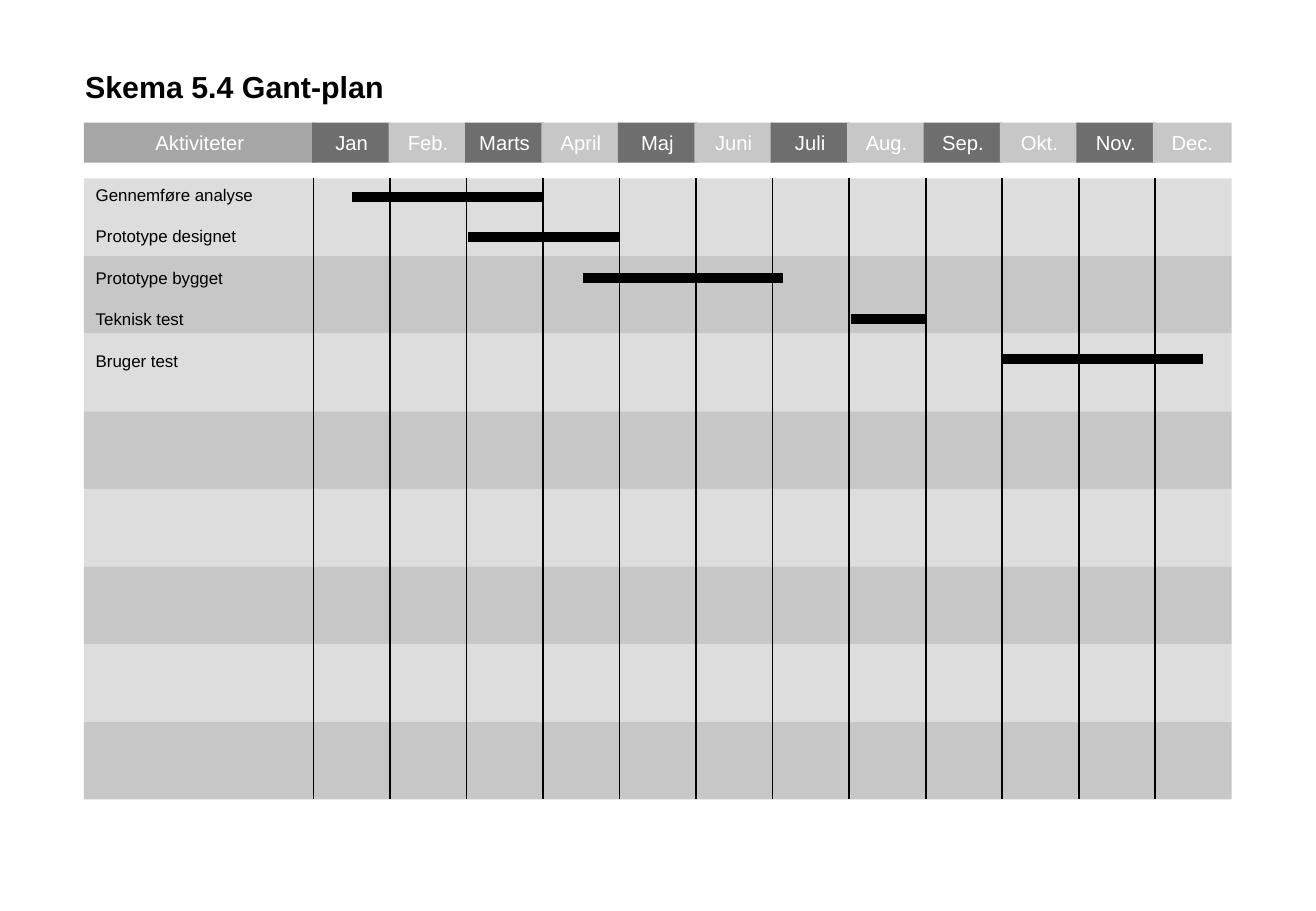
from pptx import Presentation
from pptx.dml.color import RGBColor
from pptx.enum.shapes import MSO_CONNECTOR as CONNECTOR, MSO_SHAPE as SHAPE
from pptx.enum.text import MSO_ANCHOR as ANCHOR, MSO_AUTO_SIZE as AUTO_SIZE, PP_ALIGN as ALIGN
from pptx.oxml.ns import qn
from pptx.util import Pt
from lxml.etree import SubElement

BLACK = RGBColor(0x00, 0x00, 0x00)
WHITE = RGBColor(0xFF, 0xFF, 0xFF)
DARK = RGBColor(0x6E, 0x6E, 0x6E)
MEDIUM = RGBColor(0xA6, 0xA6, 0xA6)
SILVER = RGBColor(0xC7, 0xC7, 0xC7)
PALE = RGBColor(0xDD, 0xDD, 0xDD)

MONTHS = ["Jan", "Feb.", "Marts", "April", "Maj", "Juni",
          "Juli", "Aug.", "Sep.", "Okt.", "Nov.", "Dec."]
ACTIVITIES = [
    ("Gennemføre analyse", 0.51, 2.99),
    ("Prototype designet", 2.02, 4),
    ("Prototype bygget", 3.52, 6.13),
    ("Teknisk test", 7.03, 8),
    ("Bruger test", 9, 11.63),
]

LEFT, WIDTH = 49.7, 680.4
HEADER_TOP, HEADER_HEIGHT = 72.7, 23.8
HEADER_LEFT, HEADER_STEP = 185, 45.3
PLAN_TOP, BAND_HEIGHT, BANDS = 105.8, 46, 8
PLAN_BOTTOM = PLAN_TOP + BANDS * BAND_HEIGHT
GRID_LEFT, MONTH_WIDTH = 185.8, 45.36
BAR_TOP, BAR_STEP = 116.6, 24.1


class GanttSlide:
    font = "Arial"

    def __init__(self, deck):
        self.slide = deck.slides.add_slide(deck.slide_layouts[5])

    def style(self, paragraph, size, color, bold=False, align=ALIGN.LEFT):
        paragraph.alignment = align
        paragraph.font.name = self.font
        paragraph.font.size = Pt(size)
        paragraph.font.bold = bold
        paragraph.font.color.rgb = color

    def title(self, text, left, top, width, height):
        heading = self.slide.shapes.title
        heading.left, heading.top = Pt(left), Pt(top)
        heading.width, heading.height = Pt(width), Pt(height)
        frame = heading.text_frame
        frame.text = text
        frame.word_wrap = False
        frame.auto_size = AUTO_SIZE.NONE
        frame.vertical_anchor = ANCHOR.TOP
        self.style(frame.paragraphs[0], 18, BLACK, bold=True)

    def block(self, left, top, width, height, fill, text=""):
        block = self.slide.shapes.add_shape(
            SHAPE.RECTANGLE, Pt(left), Pt(top), Pt(width), Pt(height))
        block.shadow.inherit = False
        block.fill.solid()
        block.fill.fore_color.rgb = fill
        block.line.fill.background()
        if text:
            frame = block.text_frame
            frame.margin_left = frame.margin_right = 0
            frame.vertical_anchor = ANCHOR.MIDDLE
            frame.text = text
            self.style(frame.paragraphs[0], 12, WHITE, align=ALIGN.CENTER)

    def line(self, x1, y1, x2, y2, weight):
        line = self.slide.shapes.add_connector(
            CONNECTOR.STRAIGHT, Pt(x1), Pt(y1), Pt(x2), Pt(y2))
        line.line.color.rgb = BLACK
        line.line.width = Pt(weight)
        SubElement(line._element.spPr, qn("a:effectLst"))

    def labels(self, texts, left, top, width, height, gap):
        frame = self.slide.shapes.add_textbox(
            Pt(left), Pt(top), Pt(width), Pt(height)).text_frame
        frame.word_wrap = False
        frame.text = "\n".join(texts)
        for number, paragraph in enumerate(frame.paragraphs):
            if number:
                paragraph.space_before = Pt(gap)
            self.style(paragraph, 10, BLACK)


def main():
    deck = Presentation()
    deck.slide_width, deck.slide_height = Pt(780), Pt(540)
    plan = GanttSlide(deck)
    plan.title("Skema 5.4 Gant-plan", 43.2, 36.7, 192.2, 28.8)

    for band in range(BANDS):
        plan.block(LEFT, PLAN_TOP + band * BAND_HEIGHT, WIDTH, BAND_HEIGHT,
                   SILVER if band % 2 else PALE)

    plan.block(LEFT, HEADER_TOP, 137.5, HEADER_HEIGHT, MEDIUM, "Aktiviteter")
    for number, month in enumerate(MONTHS):
        plan.block(HEADER_LEFT + number * HEADER_STEP, HEADER_TOP, 46.8,
                   HEADER_HEIGHT, SILVER if number % 2 else DARK, month)
    for number in range(len(MONTHS)):
        x = GRID_LEFT + number * MONTH_WIDTH
        plan.line(x, PLAN_TOP, x, PLAN_BOTTOM, 1)

    plan.labels([name for name, _, _ in ACTIVITIES],
                LEFT, PLAN_TOP, 108, 116.6, 12.6)
    for row, (_, start, end) in enumerate(ACTIVITIES):
        y = BAR_TOP + row * BAR_STEP
        plan.line(GRID_LEFT + start * MONTH_WIDTH, y,
                  GRID_LEFT + end * MONTH_WIDTH, y, 6)

    deck.save("out.pptx")


if __name__ == "__main__":
    main()
